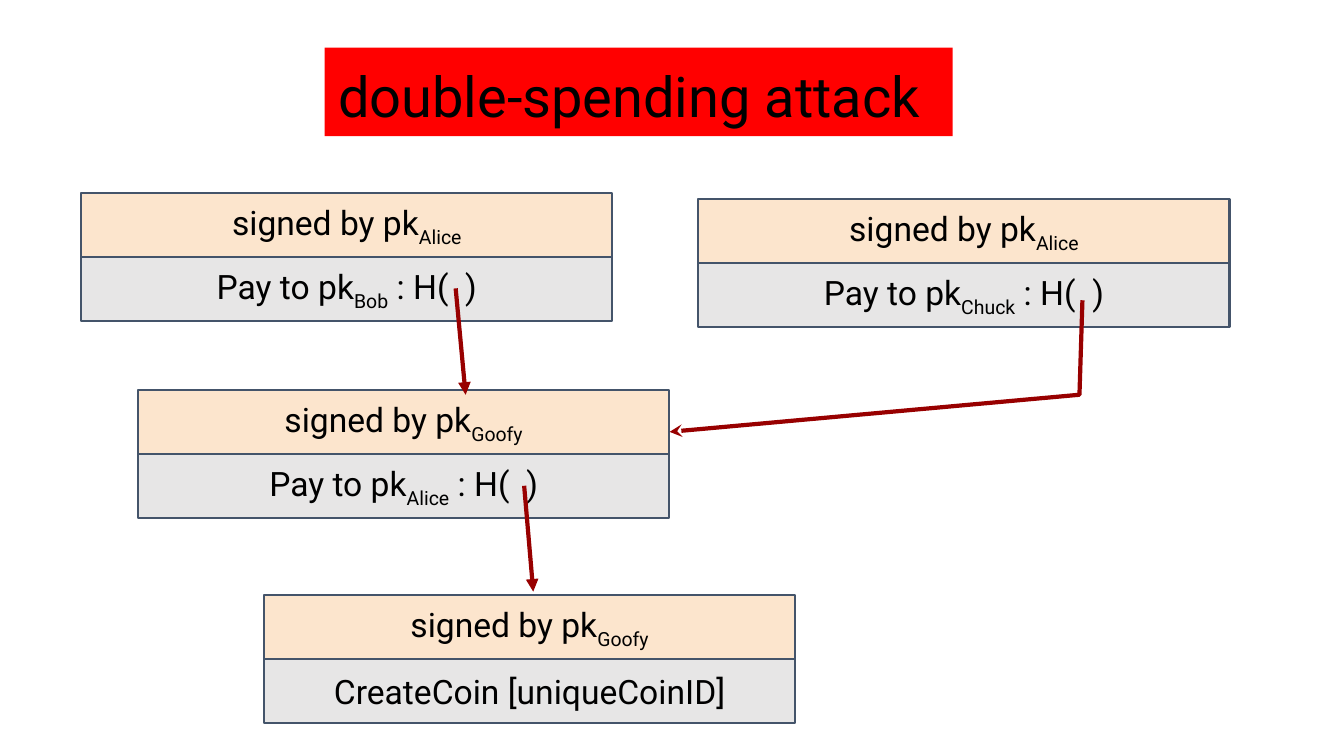
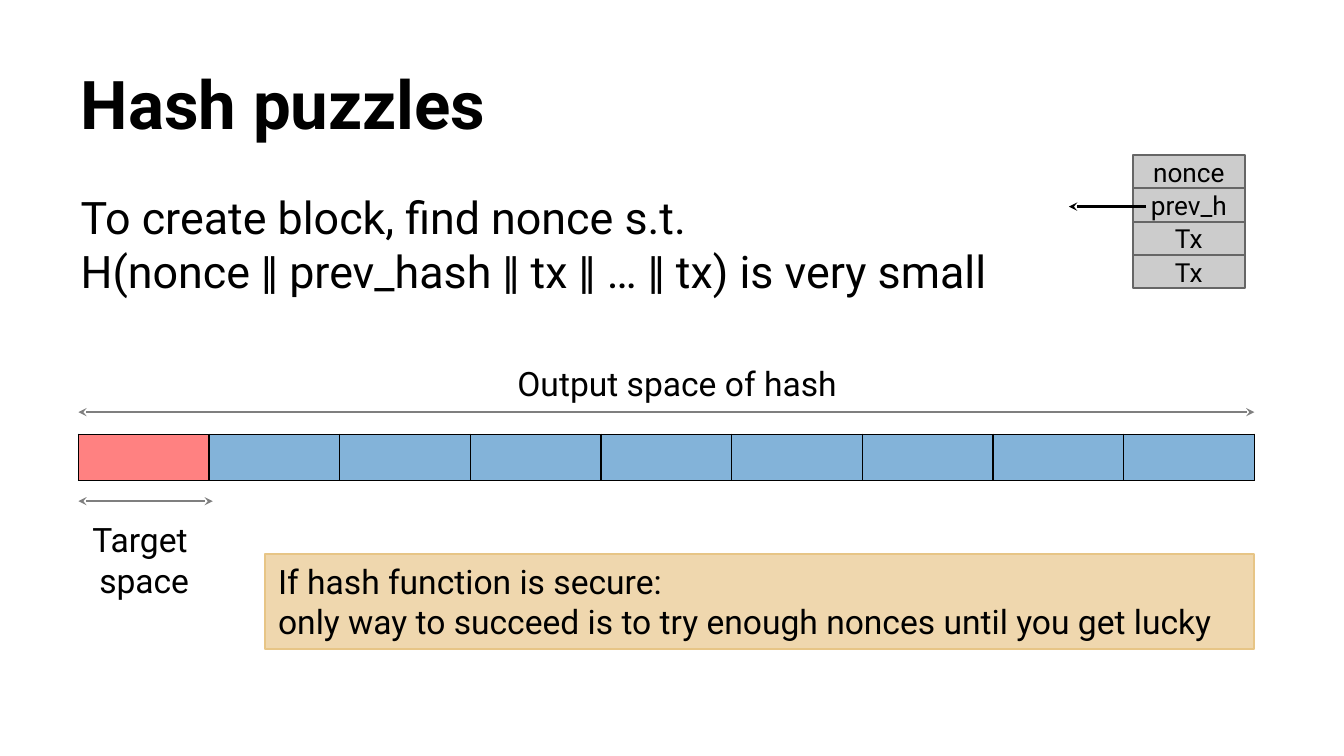
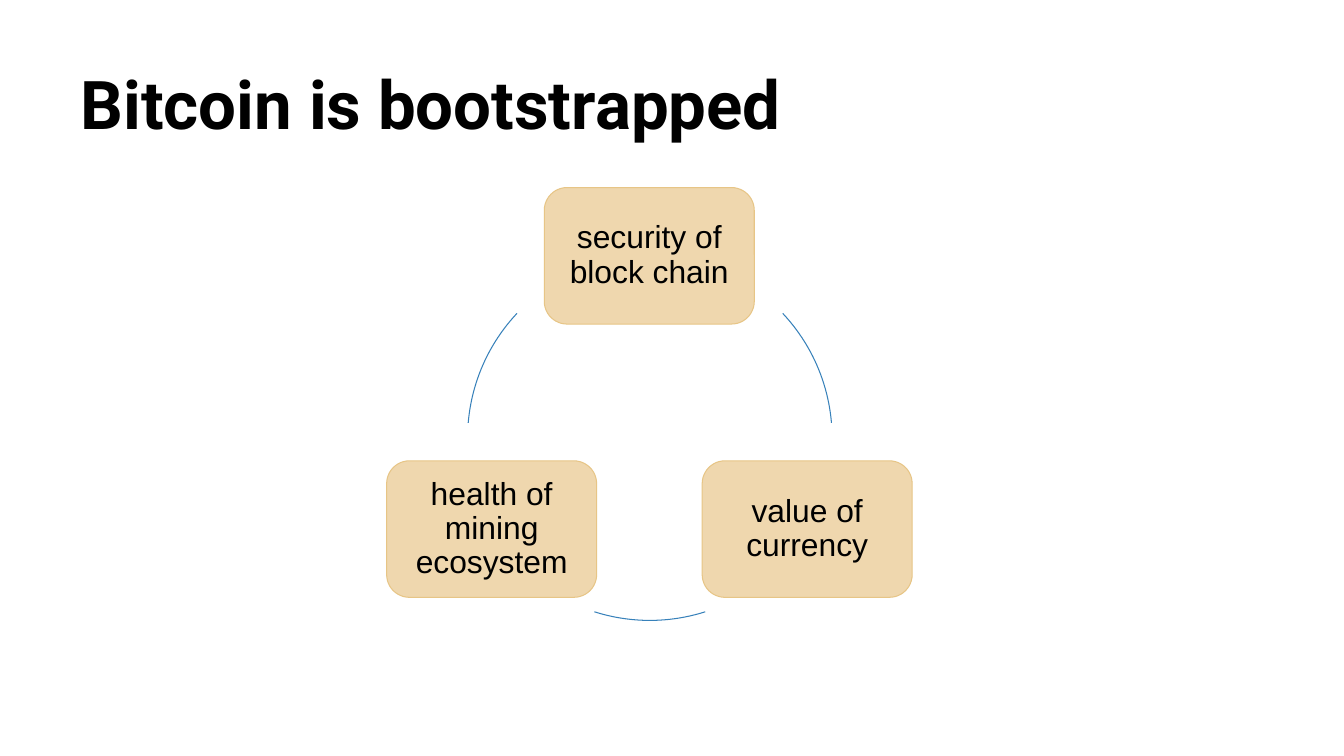
from pptx import Presentation
from pptx import util as u
from pptx.dml import color
from pptx.enum import shapes, text
from pptx.oxml import ns, xmlchemy

COLOURS = {
    "ink": "000000",
    "alert": "FF0000",
    "signed": "FCE5CD",
    "payment": "E7E6E6",
    "frame": "44546A",
    "pointer": "980000",
    "target": "FF8181",
    "space": "83B3D9",
    "range": "7F7F7F",
    "note": "EFD7AE",
    "note_edge": "E7C586",
    "block": "CCCCCC",
    "block_edge": "666666",
    "cycle": "3781BA",
}
RGB = {name: color.RGBColor.from_string(value) for name, value in COLOURS.items()}
RECTANGLE = shapes.MSO_SHAPE.RECTANGLE
LEFT, CENTER = text.PP_ALIGN.LEFT, text.PP_ALIGN.CENTER
TOP, MIDDLE, BOTTOM = text.MSO_ANCHOR.TOP, text.MSO_ANCHOR.MIDDLE, text.MSO_ANCHOR.BOTTOM
TITLE = {"size": 48, "bold": True, "anchor": BOTTOM}
TITLE_AREA = (48, 21.6, 864, 90)


def add_box(page, area, lines, kind=None, fill=None, edge=None, weight=1.5, size=24, font="Roboto",
            bold=False, align=LEFT, anchor=TOP, inset=(9.6, 9.6), spacing=None):
    area = [u.Pt(value) for value in area]
    if kind is None:
        box = page.shapes.add_textbox(*area)
    else:
        box = page.shapes.add_shape(kind, *area)
        box.shadow.inherit = False
        box.fill.solid()
        box.fill.fore_color.rgb = RGB[fill]
        if edge:
            box.line.color.rgb = RGB[edge]
            box.line.width = u.Pt(weight)
        else:
            box.line.fill.background()
    frame = box.text_frame
    frame.word_wrap = True
    frame.vertical_anchor = anchor
    frame.margin_left = frame.margin_right = u.Pt(inset[0])
    frame.margin_top = frame.margin_bottom = u.Pt(inset[1])
    for number, parts in enumerate(lines):
        para = frame.add_paragraph() if number else frame.paragraphs[0]
        para.alignment = align
        para.line_spacing = spacing
        for position, words in enumerate(parts):
            span = para.add_run()
            span.text = words
            span.font.name = font
            span.font.size = u.Pt(size)
            span.font.bold = bold
            span.font.color.rgb = RGB["ink"]
            if position % 2:
                span._r.get_or_add_rPr().set("baseline", "-25000")
    return box


def add_arrow(page, points, colour, weight, tail, head=None):
    points = [(u.Pt(x), u.Pt(y)) for x, y in points]
    if len(points) == 2:
        arrow = page.shapes.add_connector(shapes.MSO_CONNECTOR.STRAIGHT, *points[0], *points[1])
    else:
        builder = page.shapes.build_freeform(*points[0])
        builder.add_line_segments(points[1:], close=False)
        arrow = builder.convert_to_shape()
        arrow.fill.background()
    arrow.line.color.rgb = RGB[colour]
    arrow.line.width = u.Pt(weight)
    properties = arrow._element.spPr
    outline = properties.find(ns.qn("a:ln"))
    for tag, style in (("a:headEnd", head), ("a:tailEnd", tail)):
        if style:
            end = xmlchemy.OxmlElement(tag)
            end.set("type", style)
            outline.append(end)
    properties.append(xmlchemy.OxmlElement("a:effectLst"))


deck = Presentation()
deck.slide_width, deck.slide_height = u.Pt(960), u.Pt(540)
blank = deck.slide_layouts[6]

page = deck.slides.add_slide(blank)
row_width, row_height = 379.5, 45.7
transactions = [
    (188.6, 425.2, "Goofy", ["CreateCoin [uniqueCoinID]"]),
    (98.6, 278.8, "Goofy", ["Pay to pk", "Alice", " : H(  )"]),
    (58, 138, "Alice", ["Pay to pk", "Bob", " : H(  )"]),
    (498.8, 142.3, "Alice", ["Pay to pk", "Chuck", " : H(  )"]),
]
for left, top, signer, payment in transactions:
    rows = [("signed", ["signed by pk", signer]), ("payment", payment)]
    for number, (fill, parts) in enumerate(rows):
        add_box(page, (left, top + number * row_height, row_width, row_height), [parts],
                RECTANGLE, fill, "frame", align=CENTER, anchor=MIDDLE)
add_arrow(page, [(374.4, 347), (380.9, 422.6)], "pointer", 3, "triangle")
add_arrow(page, [(325.5, 206), (332.6, 282)], "pointer", 3, "triangle")
add_arrow(page, [(773.2, 214.5), (771.1, 282), (478.3, 308.5)], "pointer", 3, "stealth")
add_box(page, (232, 34, 448.6, 63.3), [["double-spending attack"]], RECTANGLE, "alert", size=40)

page = deck.slides.add_slide(blank)
add_box(page, TITLE_AREA, [["Hash puzzles"]], **TITLE)
add_box(page, (48, 126, 864, 391), [
    ["To create block, find nonce s.t."],
    ["H(nonce ‖ prev_hash ‖ tx ‖ … ‖ tx) is very small"],
], size=32)

cell_count, cell_width = 9, 93.33
table = page.shapes.add_table(1, cell_count, u.Pt(56), u.Pt(310.2),
                              u.Pt(cell_count * cell_width), u.Pt(32.8)).table
table.first_row = table.horz_banding = False
for number, cell in enumerate(table.iter_cells()):
    table.columns[number].width = u.Pt(cell_width)
    for tag in ("a:lnL", "a:lnR", "a:lnT", "a:lnB"):
        border = xmlchemy.OxmlElement(tag)
        border.set("w", str(u.Pt(1)))
        paint = xmlchemy.OxmlElement("a:solidFill")
        shade = xmlchemy.OxmlElement("a:srgbClr")
        shade.set("val", COLOURS["ink"])
        paint.append(shade)
        border.append(paint)
        cell._tc.get_or_add_tcPr().append(border)
    cell.fill.solid()
    cell.fill.fore_color.rgb = RGB["space" if number else "target"]

for right, height in ((896, 294.4), (152, 358)):
    add_arrow(page, [(56, height), (right, height)], "range", 1.5, "stealth", "stealth")
add_box(page, (360, 254.2, 249, 39), [["Output space of hash"]], inset=(9.6, 4.8))
add_box(page, (54, 366, 98, 67.7), [["Target "], ["space"]], align=CENTER, inset=(9.6, 4.8))
add_box(page, (189, 395.8, 707, 68), [
    ["If hash function is secure:"],
    ["only way to succeed is to try enough nonces until you get lucky"],
], RECTANGLE, "note", "note_edge", inset=(9.6, 4.8))

field_height = 23.8
for number, field in enumerate(["nonce", "prev_h", "Tx", "Tx"]):
    add_box(page, (809, 110.8 + number * field_height, 80.3, field_height), [[field]],
            RECTANGLE, "block", "block_edge", size=18.7, align=CENTER, anchor=MIDDLE)
add_arrow(page, [(818.6, 147.6), (763.5, 147.6)], "ink", 2, "stealth")

page = deck.slides.add_slide(blank)
add_box(page, TITLE_AREA, [["Bitcoin is bootstrapped"]], **TITLE)
stages = [
    (388.8, 134, "security of block chain"),
    (501.6, 329.2, "value of currency"),
    (276.2, 329.2, "health of mining ecosystem"),
]
for left, top, words in stages:
    stage = add_box(page, (left, top, 150, 97.5), [[words]], shapes.MSO_SHAPE.ROUNDED_RECTANGLE,
                    "note", "note_edge", 0.75, 22.7, "Arial", align=CENTER, anchor=MIDDLE,
                    inset=(6.5, 6.5), spacing=0.9)
    stage.adjustments[0] = 0.167

for start, end in ((316.8, 355.2), (72.3, 107.7), (184.8, 223.2)):
    arc = page.shapes.add_shape(shapes.MSO_SHAPE.ARC, u.Pt(334), u.Pt(182.8), u.Pt(260.4), u.Pt(260.4))
    arc.shadow.inherit = False
    arc.fill.background()
    arc.line.color.rgb = RGB["cycle"]
    arc.line.width = u.Pt(0.75)
    for index, degrees in enumerate((start, end)):
        arc.adjustments[index] = degrees * 0.6

deck.save("out.pptx")
